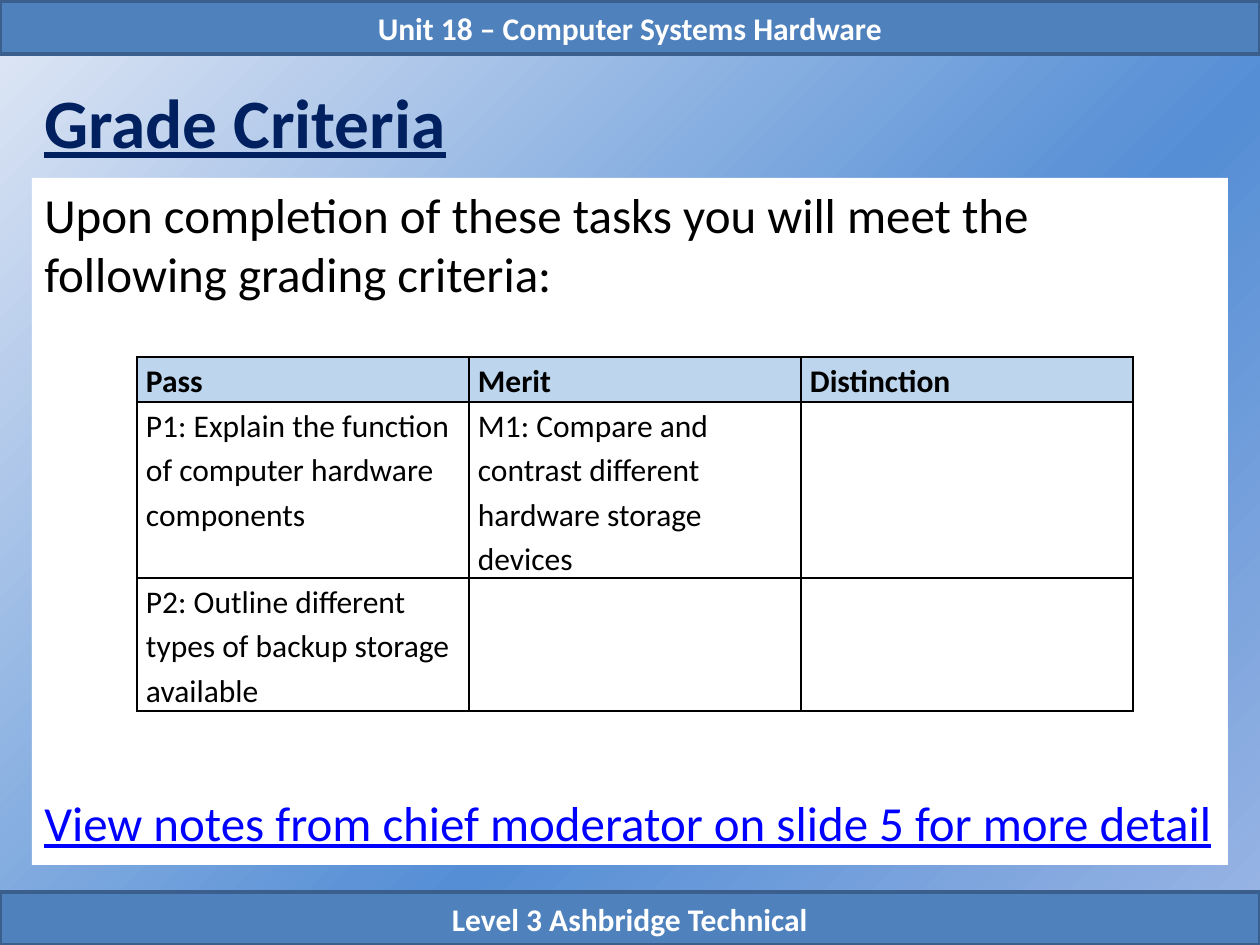
from typing import NamedTuple

from pptx import Presentation
from pptx.dml.color import RGBColor
from pptx.enum.shapes import MSO_SHAPE
from pptx.enum.text import MSO_ANCHOR, PP_ALIGN
from pptx.oxml import parse_xml
from pptx.oxml.ns import nsdecls, qn
from pptx.util import Emu, Pt

RECT = MSO_SHAPE.RECTANGLE
TOP, MID = MSO_ANCHOR.TOP, MSO_ANCHOR.MIDDLE
LEFT, MIDDLE = PP_ALIGN.LEFT, PP_ALIGN.CENTER

COLORS = {
    "bar": "4F81BD", "edge": "3A5F8C", "panel": "FFFFFF", "head": "BDD6EE",
    "navy": "002060", "black": "000000", "white": "FFFFFF", "link": "0000FF",
}
STOPS = [(0, "9AB5E4"), (39, "558ED5"), (44, "5E94D7"), (100, "E1E8F5")]

# Font formats
FORMATS = {
    "bar": {"size": Pt(18), "bold": True},
    "title": {"size": Pt(39.6), "bold": True, "underline": True},
    "body": {"size": Pt(28)},
    "link": {"size": Pt(28), "underline": True},
    "head": {"size": Pt(18), "bold": True},
    "cell": {"size": Pt(18), "bold": False},
}


class Box(NamedTuple):
    text: str
    x: int
    y: int
    w: int
    h: int
    form: str
    ink: str
    fill: str = ""
    edge: str = ""
    anchor: MSO_ANCHOR = MID
    align: PP_ALIGN = LEFT
    wrap: bool = True


BOXES = [
    Box("Level 3 Ashbridge Technical", 0, 892, 1260, 53, "bar", "white",
        "bar", "edge", align=MIDDLE),
    Box("Unit 18 – Computer Systems Hardware", 0, 1, 1260, 53, "bar", "white",
        "bar", "edge", align=MIDDLE),
    Box("Grade Criteria", 32, 73, 1196, 95, "title", "navy"),
    Box("Upon completion of these tasks you will meet the following grading "
        "criteria:", 32, 178, 1196, 687, "body", "black", "panel", anchor=TOP),
    Box("View notes from chief moderator on slide 5 for more detail",
        32, 786, 1196, 72, "link", "link", anchor=TOP, wrap=False),
]

GRADES = [
    ["Pass", "Merit", "Distinction"],
    ["P1: Explain the function of computer hardware components",
     "M1: Compare and contrast different hardware storage devices", ""],
    ["P2: Outline different types of backup storage available", "", ""],
]
ROWS = [45, 176, 133]
COL = 332


def px(count: int) -> Emu:
    return Emu(round(count * 914400 / 126))


def rgb(name: str) -> RGBColor:
    return RGBColor.from_string(COLORS[name])


def style(font, form: str, ink: str) -> None:
    font.name = "Calibri"
    font.color.rgb = rgb(ink)
    for key, value in FORMATS[form].items():
        setattr(font, key, value)


def backdrop(slide) -> None:
    slide.background.fill.solid()
    holder = slide.element.find(".//" + qn("p:bgPr"))
    stops = "".join(
        f'<a:gs pos="{spot * 1000}"><a:srgbClr val="{tint}"/></a:gs>'
        for spot, tint in STOPS)
    holder.replace(holder[0], parse_xml(
        f'<a:gradFill {nsdecls("a")} rotWithShape="1"><a:gsLst>{stops}</a:gsLst>'
        '<a:path path="circle"><a:fillToRect l="100000" t="100000"/></a:path>'
        '</a:gradFill>'))


def draw(slide, box: Box) -> None:
    place = [px(n) for n in (box.x, box.y, box.w, box.h)]
    if box.fill:
        shape = slide.shapes.add_shape(RECT, *place)
        shape.shadow.inherit = False
        shape.fill.solid()
        shape.fill.fore_color.rgb = rgb(box.fill)
        if box.edge:
            shape.line.color.rgb = rgb(box.edge)
            shape.line.width = Pt(2)
        else:
            shape.line.fill.background()
    else:
        shape = slide.shapes.add_textbox(*place)
    frame = shape.text_frame
    frame.word_wrap = box.wrap
    frame.vertical_anchor = box.anchor
    para = frame.paragraphs[0]
    para.text = box.text
    para.alignment = box.align
    style(para.font, box.form, box.ink)


def border(cell) -> None:
    props = cell._tc.get_or_add_tcPr()
    for spot, side in enumerate(("lnL", "lnR", "lnT", "lnB")):
        props.insert(spot, parse_xml(
            f'<a:{side} {nsdecls("a")} w="12700"><a:solidFill>'
            f'<a:srgbClr val="{COLORS["black"]}"/></a:solidFill></a:{side}>'))


def grid(slide, x: int, y: int) -> None:
    table = slide.shapes.add_table(
        len(ROWS), len(GRADES[0]), px(x), px(y),
        px(COL * len(GRADES[0])), px(sum(ROWS))).table
    table.first_row = table.horz_banding = False
    for col in table.columns:
        col.width = px(COL)
    for r, texts in enumerate(GRADES):
        table.rows[r].height = px(ROWS[r])
        for c, text in enumerate(texts):
            cell = table.cell(r, c)
            cell.margin_left = cell.margin_right = px(9)
            cell.margin_top = cell.margin_bottom = 0
            if r == 0:
                cell.fill.solid()
                cell.fill.fore_color.rgb = rgb("head")
            else:
                cell.fill.background()
            border(cell)
            para = cell.text_frame.paragraphs[0]
            para.text = text
            para.line_spacing = 1.15
            style(para.font, "cell" if r else "head", "black")


def main() -> None:
    deck = Presentation()
    deck.slide_width, deck.slide_height = px(1260), px(945)
    slide = deck.slides.add_slide(deck.slide_layouts[6])
    backdrop(slide)
    # Bars, title and panel
    for box in BOXES:
        draw(slide, box)
    # Criteria table
    grid(slide, 137, 357)
    deck.save("out.pptx")


if __name__ == "__main__":
    main()
